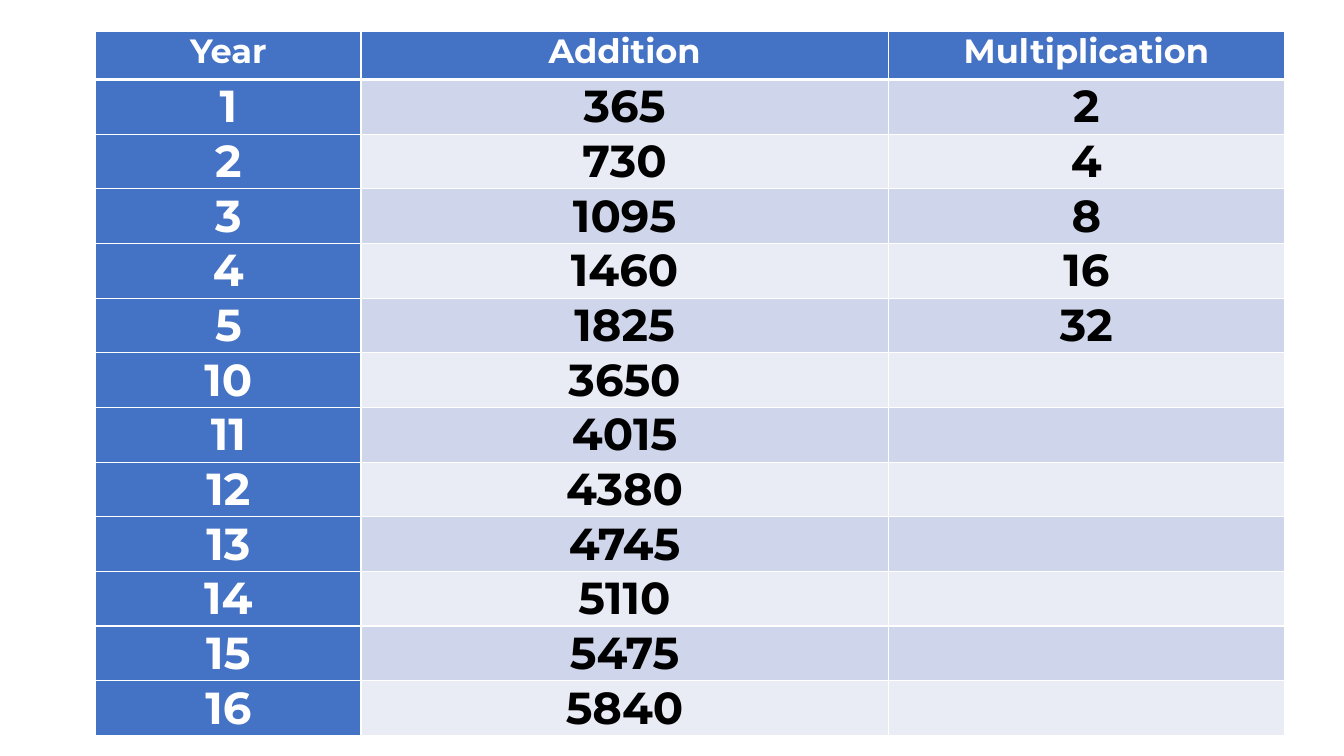
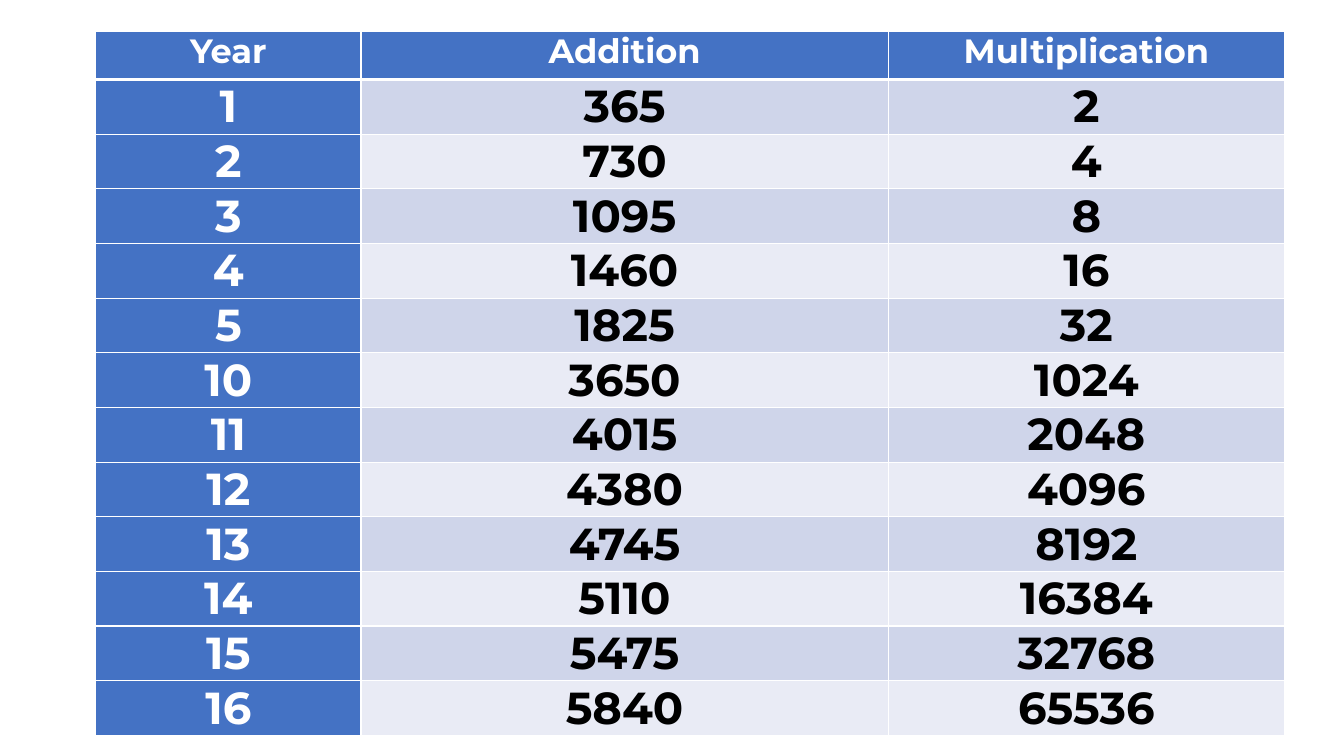
from dataclasses import dataclass

from lxml import etree
from pptx import Presentation
from pptx.dml.color import RGBColor
from pptx.enum.text import MSO_ANCHOR, PP_ALIGN
from pptx.oxml.ns import qn
from pptx.slide import Slide
from pptx.table import _Cell
from pptx.util import Emu, Pt

CENTER = PP_ALIGN.CENTER
TOP = MSO_ANCHOR.TOP

EMU_PER_PX = 9144  # 100 px to the inch
SLIDE_SIZE = (1333, 750)
TABLE_LEFT, TABLE_TOP, TABLE_HEIGHT = 95, 31, 688
COLUMN_WIDTHS = (263, 523, 393)
ROW_HEIGHT = 48
SIDE_MARGIN = 7

FONT = "Montserrat"
COLORS = {
    "accent": "4472C4",
    "band_dark": "CFD5EA",
    "band_light": "E9EBF5",
    "white": "FFFFFF",
    "black": "000000",
}
THIN, THICK = 1, 3

HEADERS = ("Year", "Addition", "Multiplication")
YEARS = (*range(1, 6), *range(10, 17))
LAST_DOUBLED_YEARS = (5, 16)  # one slide for each


@dataclass(frozen=True)
class CellStyle:
    fill: str
    text_color: str
    text_size: int
    top_border: int = THIN
    bottom_border: int = THIN


def px(length: int) -> Emu:
    return Emu(length * EMU_PER_PX)


def rgb(name: str) -> RGBColor:
    return RGBColor.from_string(COLORS[name])


def growth_rows(last_doubled_year: int) -> list[tuple[str, ...]]:
    """Compare adding 365 a year with doubling every year."""
    rows = [HEADERS]
    for year in YEARS:
        doubled = str(2 ** year) if year <= last_doubled_year else ""
        rows.append((str(year), str(365 * year), doubled))
    return rows


def style_for(row: int, column: int) -> CellStyle:
    if row == 0:
        return CellStyle("accent", "white", 24, bottom_border=THICK)
    top_border = THICK if row == 1 else THIN
    if column == 0:
        return CellStyle("accent", "white", 32, top_border)
    band = "band_dark" if row % 2 else "band_light"
    return CellStyle(band, "black", 32, top_border)


def set_borders(cell: _Cell, style: CellStyle) -> None:
    properties = cell._tc.get_or_add_tcPr()
    widths = {"a:lnL": THIN, "a:lnR": THIN,
              "a:lnT": style.top_border, "a:lnB": style.bottom_border}
    for tag, width in widths.items():
        line = etree.SubElement(properties, qn(tag), w=str(Pt(width)))
        fill = etree.SubElement(line, qn("a:solidFill"))
        etree.SubElement(fill, qn("a:srgbClr"), val=COLORS["white"])


def fill_cell(cell: _Cell, text: str, style: CellStyle) -> None:
    cell_format = {
        "margin_left": px(SIDE_MARGIN), "margin_right": px(SIDE_MARGIN),
        "margin_top": 0, "margin_bottom": 0, "vertical_anchor": TOP,
    }
    for name, value in cell_format.items():
        setattr(cell, name, value)
    set_borders(cell, style)
    cell.fill.solid()
    cell.fill.fore_color.rgb = rgb(style.fill)

    paragraph = cell.text_frame.paragraphs[0]
    paragraph.alignment = CENTER
    if text:
        run = paragraph.add_run()
        run.text = text
        font_format = {"name": FONT, "size": Pt(style.text_size), "bold": True}
        for name, value in font_format.items():
            setattr(run.font, name, value)
        run.font.color.rgb = rgb(style.text_color)


def add_growth_table(slide: Slide, rows: list[tuple[str, ...]]) -> None:
    shape = slide.shapes.add_table(
        len(rows), len(COLUMN_WIDTHS), px(TABLE_LEFT), px(TABLE_TOP),
        px(sum(COLUMN_WIDTHS)), px(ROW_HEIGHT * len(rows)))
    table = shape.table
    table.horz_banding = False
    for column, width in zip(table.columns, COLUMN_WIDTHS):
        column.width = px(width)
    shape.height = px(TABLE_HEIGHT)

    for row, texts in enumerate(rows):
        for column, text in enumerate(texts):
            fill_cell(table.cell(row, column), text, style_for(row, column))


def main() -> None:
    presentation = Presentation()
    presentation.slide_width, presentation.slide_height = map(px, SLIDE_SIZE)
    blank_layout = presentation.slide_layouts[6]

    # One slide for each stage of the comparison
    for last_doubled_year in LAST_DOUBLED_YEARS:
        slide = presentation.slides.add_slide(blank_layout)
        add_growth_table(slide, growth_rows(last_doubled_year))
    presentation.save("out.pptx")


if __name__ == "__main__":
    main()
